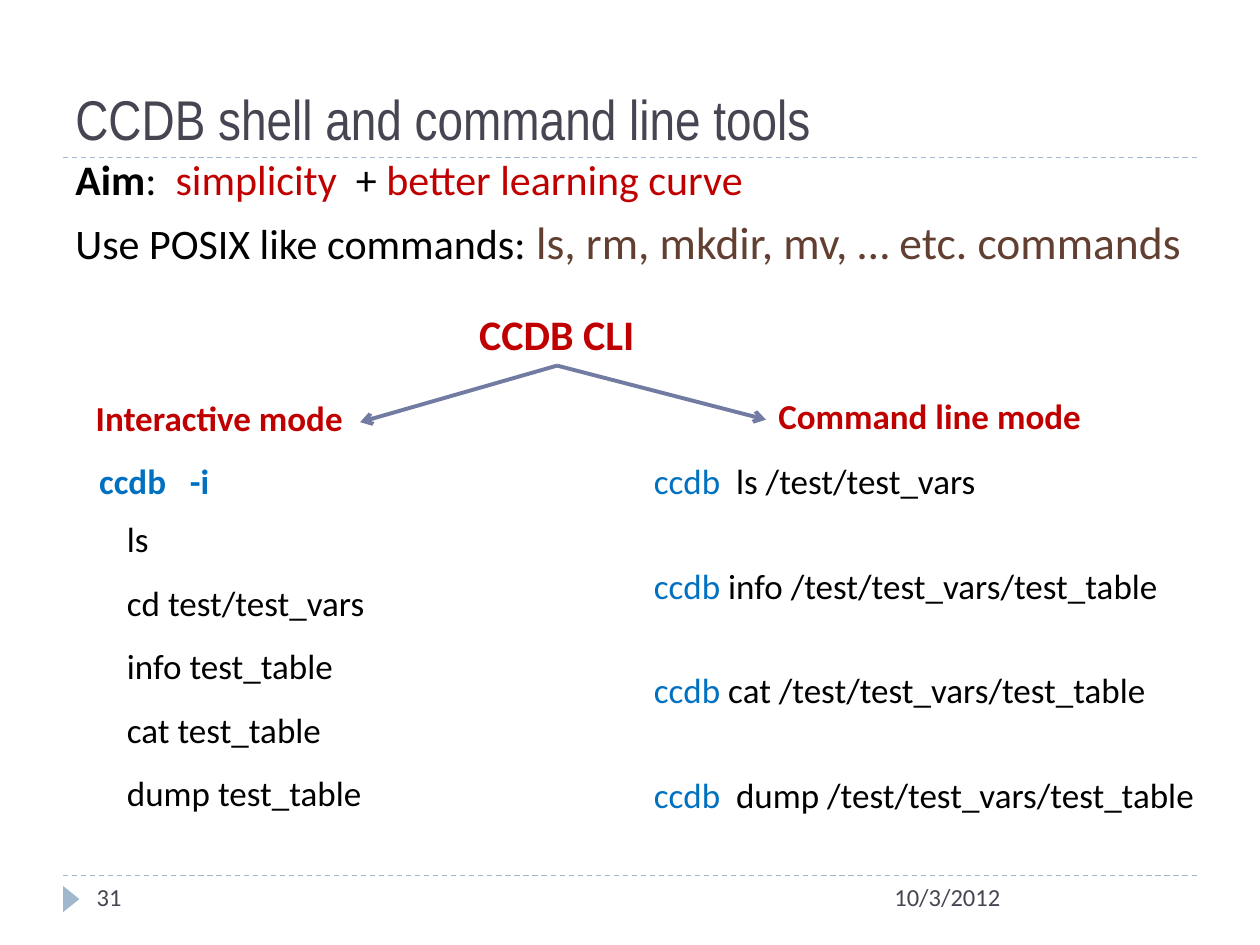
from lxml import etree
from pptx import Presentation
from pptx.dml.color import RGBColor
from pptx.enum.dml import MSO_LINE
from pptx.enum.shapes import MSO_CONNECTOR, MSO_SHAPE
from pptx.enum.text import MSO_ANCHOR, MSO_AUTO_SIZE, PP_ALIGN
from pptx.oxml.ns import qn
from pptx.util import Cm, Pt

STRAIGHT = MSO_CONNECTOR.STRAIGHT
TRIANGLE = MSO_SHAPE.ISOSCELES_TRIANGLE
DASH = MSO_LINE.DASH
TOP, BOTTOM = MSO_ANCHOR.TOP, MSO_ANCHOR.BOTTOM
LEFT, CENTER = PP_ALIGN.LEFT, PP_ALIGN.CENTER
FIT_SHAPE = MSO_AUTO_SIZE.SHAPE_TO_FIT_TEXT

BLACK, RED, BLUE, BROWN = "000000", "C00000", "0070C0", "633F32"
SLATE, PALE_BLUE, ARROW_BLUE = "464653", "9FB8CD", "727CA3"


def color(hex_string):
    return RGBColor.from_string(hex_string)


def add_run(paragraph, text, size=20, font="Calibri", fill=BLACK, bold=False):
    run = paragraph.add_run()
    run.text = text
    run.font.size = Pt(size)
    run.font.name = font
    run.font.bold = bold
    run.font.color.rgb = color(fill)


def add_text(slide, box, paragraphs, align=LEFT, anchor=TOP, before=0, wrap=True):
    shape = slide.shapes.add_textbox(*map(Cm, box))
    frame = shape.text_frame
    frame.word_wrap = wrap
    frame.vertical_anchor = anchor
    if not wrap:
        frame.auto_size = FIT_SHAPE
    for index, runs in enumerate(paragraphs):
        paragraph = frame.add_paragraph() if index else frame.paragraphs[0]
        paragraph.alignment = align
        paragraph.space_before = Pt(before)
        for text, style in runs:
            add_run(paragraph, text, **style)


def add_line(slide, start, end, fill, width):
    line = slide.shapes.add_connector(STRAIGHT, *map(Cm, start + end))
    line.line.color.rgb = color(fill)
    line.line.width = Pt(width)
    etree.SubElement(line._element.spPr, qn("a:effectLst"))
    return line


def add_rule(slide, top):
    add_line(slide, (1.27, top), (24.13, top), PALE_BLUE, 0.75).line.dash_style = DASH


def add_arrow(slide, start, end):
    arrow = add_line(slide, start, end, ARROW_BLUE, 2.25)
    etree.SubElement(arrow.line._get_or_add_ln(), qn("a:tailEnd"), type="arrow")


def add_marker(slide):
    marker = slide.shapes.add_shape(TRIANGLE, *map(Cm, (1.17, 17.96, 0.53, 0.33)))
    marker.rotation = 90
    marker.shadow.inherit = False
    marker.fill.solid()
    marker.fill.fore_color.rgb = color(PALE_BLUE)
    marker.line.fill.background()


def add_header(slide):
    title = {"size": 32, "font": "Arial Narrow", "fill": SLATE}
    add_text(slide, (1.27, 0.43, 22.86, 2.75),
             [[("CCDB shell and command line tools", title)]], anchor=BOTTOM)
    aim = [
        ("Aim", {"size": 24, "bold": True}),
        (":  ", {"size": 24}),
        ("simplicity  ", {"size": 24, "fill": RED}),
        ("+", {"size": 24}),
        (" better learning curve", {"size": 24, "fill": RED}),
    ]
    usage = [
        ("Use POSIX like commands:", {"size": 24}),
        (" ", {"size": 26}),
        ("ls, rm, mkdir, mv, … etc. commands", {"size": 26, "fill": BROWN}),
    ]
    add_text(slide, (1.27, 2.97, 22.86, 3.61), [aim, usage], before=6)


def add_modes(slide):
    heading = {"fill": RED, "bold": True}
    add_text(slide, (5.08, 6.1, 12.29, 1.27),
             [[("CCDB CLI", {**heading, "size": 24})]], align=CENTER, before=6)
    add_text(slide, (1.68, 7.87, 5.61, 1.27), [[("Interactive mode", heading)]], before=6)
    add_text(slide, (15.44, 7.82, 7.62, 1.27), [[("Command line mode", heading)]], before=6)
    for tip in ((7.26, 8.51), (15.44, 8.46)):
        add_arrow(slide, (11.23, 7.37), tip)


def add_commands(slide):
    add_text(slide, (1.75, 9.14, 2.72, 1.11),
             [[("ccdb   -i", {"fill": BLUE, "bold": True})]], wrap=False)
    interactive = (("ls", 1.12), ("cd test/test_vars", 5.51), ("info test_table", 4.88),
                   ("cat test_table", 4.62), ("dump test_table", 5.46))
    for row, (command, width) in enumerate(interactive):
        add_text(slide, (2.31, 10.31 + 1.28 * row, width, 1.11), [[(command, {})]], wrap=False)
    command_line = (("ccdb  ", "ls /test/test_vars", 7.39),
                    ("ccdb ", "info /test/test_vars/test_table", 10.82),
                    ("ccdb ", "cat /test/test_vars/test_table", 10.72),
                    ("ccdb  ", "dump /test/test_vars/test_table", 11.68))
    for row, (program, arguments, width) in enumerate(command_line):
        add_text(slide, (12.93, 9.14 + 2.11 * row, width, 1.11),
                 [[(program, {"fill": BLUE}), (arguments, {})]], wrap=False)


def add_footer(slide):
    style = {"size": 14, "fill": SLATE}
    add_marker(slide)
    add_text(slide, (17.78, 17.65, 6.35, 1.02), [[("10/3/2012", style)]])
    add_text(slide, (1.7, 17.65, 5.51, 1.02), [[("31", style)]])


def main():
    presentation = Presentation()
    presentation.slide_width, presentation.slide_height = Cm(25.4), Cm(19.05)
    slide = presentation.slides.add_slide(presentation.slide_layouts[6])
    for top in (3.18, 17.65):
        add_rule(slide, top)
    add_header(slide)
    add_modes(slide)
    add_commands(slide)
    add_footer(slide)
    presentation.save("out.pptx")


if __name__ == "__main__":
    main()
